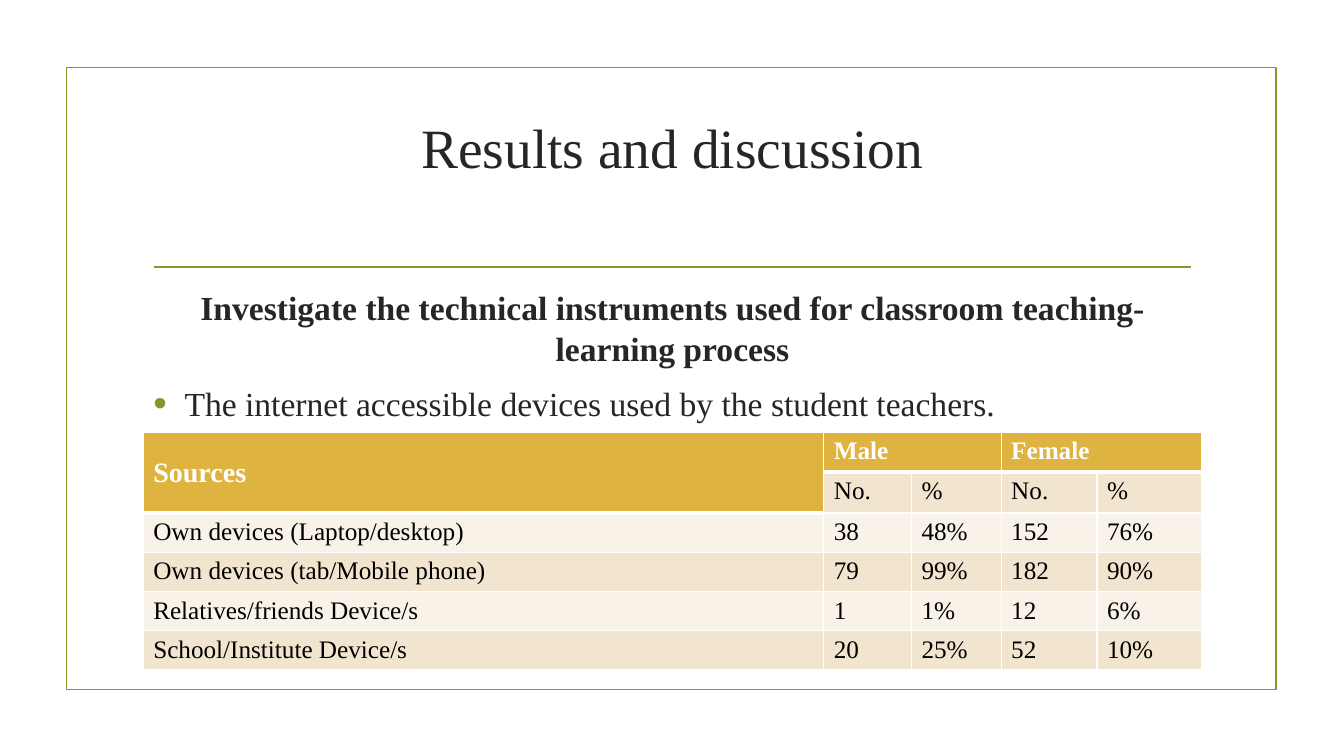
from lxml.etree import SubElement
from pptx import Presentation
from pptx.dml.color import RGBColor
from pptx.enum.shapes import MSO_CONNECTOR as Link, MSO_SHAPE as Shape
from pptx.enum.text import MSO_ANCHOR as Anchor, MSO_AUTO_SIZE as Fit, PP_ALIGN as Align
from pptx.oxml.ns import qn
from pptx.util import Inches, Pt

GREEN = RGBColor(0x83, 0x99, 0x2A)
GOLD = RGBColor(0xDE, 0xB3, 0x40)
SAND = RGBColor(0xF2, 0xE5, 0xCF)
CREAM = RGBColor(0xF9, 0xF2, 0xE8)
INK = RGBColor(0x26, 0x26, 0x26)
BLACK = RGBColor(0, 0, 0)
WHITE = RGBColor(255, 255, 255)
FONT = "Times New Roman"

TITLE = "Results and discussion"
AIM = "Investigate the technical instruments used for classroom teaching- learning process"
POINT = "The internet accessible devices used by the student teachers."
ROWS = [
    ("Sources", "Male", "", "Female", ""),
    ("", "No.", "%", "No.", "%"),
    ("Own devices (Laptop/desktop)", "38", "48%", "152", "76%"),
    ("Own devices (tab/Mobile phone)", "79", "99%", "182", "90%"),
    ("Relatives/friends Device/s", "1", "1%", "12", "6%"),
    ("School/Institute Device/s", "20", "25%", "52", "10%"),
]
WIDTHS = (6.75, 0.87, 0.89, 0.95, 1.04)
SPANS = [((0, 0), (1, 0)), ((0, 1), (0, 2)), ((0, 3), (0, 4))]
LEFT, WIDE, HIGH = 1.42, 10.5, 0.39


def write(para, text, size=18, color=BLACK, bold=False, align=Align.LEFT, before=0, after=0):
    para.alignment = align
    para.space_before, para.space_after = Pt(before), Pt(after)
    run = para.add_run()
    run.text = text
    font = run.font
    font.name, font.size, font.bold = FONT, Pt(size), bold
    font.color.rgb = color
    return font


def place(shape, top, height, anchor):
    shape.left, shape.top = Inches(LEFT), Inches(top)
    shape.width, shape.height = Inches(WIDE), Inches(height)
    frame = shape.text_frame
    frame.word_wrap, frame.auto_size = True, Fit.NONE
    frame.vertical_anchor = anchor
    return frame


def bullet(para, char=None):
    props = para._p.get_or_add_pPr()
    hang = Inches(0.31) if char else 0
    props.set("marL", str(hang))
    props.set("indent", str(-hang))
    if not char:
        SubElement(props, qn("a:buNone"))
        return
    tint = SubElement(props, qn("a:buClr"))
    SubElement(tint, qn("a:srgbClr"), val=str(GREEN))
    SubElement(props, qn("a:buSzPct"), val="115000")
    SubElement(props, qn("a:buFont"), typeface="Arial")
    SubElement(props, qn("a:buChar"), char=char)


def border(cell, **sides):
    props = cell._tc.get_or_add_tcPr()
    for side, width in sides.items():
        line = SubElement(props, qn("a:ln" + side), w=str(Pt(width)))
        fill = SubElement(line, qn("a:solidFill"))
        SubElement(fill, qn("a:srgbClr"), val=str(WHITE))


def is_head(row, col):
    return row == 0 or (row == 1 and col == 0)


def add_grid(slide):
    size = Inches(LEFT), Inches(4.29), Inches(WIDE), Inches(HIGH * len(ROWS))
    table = slide.shapes.add_table(len(ROWS), len(WIDTHS), *size).table
    for col, width in zip(table.columns, WIDTHS):
        col.width = Inches(width)
    for row in table.rows:
        row.height = Inches(HIGH)
    for first, last in SPANS:
        table.cell(*first).merge(table.cell(*last))
    for r, row in enumerate(ROWS):
        for c, text in enumerate(row):
            cell, head = table.cell(r, c), is_head(r, c)
            edge = r > 0 and not head and is_head(r - 1, c)
            border(cell, L=1, R=1, T=3 if edge else 1, B=3 if head else 1)
            cell.fill.solid()
            cell.fill.fore_color.rgb = GOLD if head else SAND if r % 2 else CREAM
            if text:
                big = (r, c) == (0, 0)
                cell.vertical_anchor = Anchor.MIDDLE if big else Anchor.TOP
                write(cell.text_frame.paragraphs[0], text, size=20 if big else 18,
                      color=WHITE if head else BLACK, bold=head)


def main():
    deck = Presentation()
    deck.slide_width, deck.slide_height = Inches(13.33), Inches(7.5)
    slide = deck.slides.add_slide(deck.slide_layouts[1])
    title, body = slide.placeholders

    frame = slide.shapes.add_shape(Shape.RECTANGLE, Inches(0.66), Inches(0.67), Inches(12), Inches(6.17))
    frame.shadow.inherit = False
    frame.fill.background()
    rule = slide.shapes.add_connector(Link.STRAIGHT, Inches(1.53), Inches(2.65), Inches(11.81), Inches(2.65))
    SubElement(rule._element.spPr, qn("a:effectLst"))
    for shape in (frame, rule):
        shape.line.color.rgb = GREEN
        shape.line.width = Pt(1.25)

    para = place(title, 1.07, 1.43, Anchor.MIDDLE).paragraphs[0]
    write(para, TITLE, size=39.6, color=INK, align=Align.CENTER)
    para.add_line_break()
    para.font.size = Pt(39.6)

    text = place(body, 2.8, 3.63, Anchor.TOP)
    aim, point = text.paragraphs[0], text.add_paragraph()
    bullet(aim)
    write(aim, AIM, size=24, color=INK, bold=True, align=Align.CENTER, after=6)
    bullet(point, "•")
    write(point, POINT, size=24, color=INK, before=4.8, after=6)

    add_grid(slide)
    deck.save("out.pptx")


if __name__ == "__main__":
    main()
